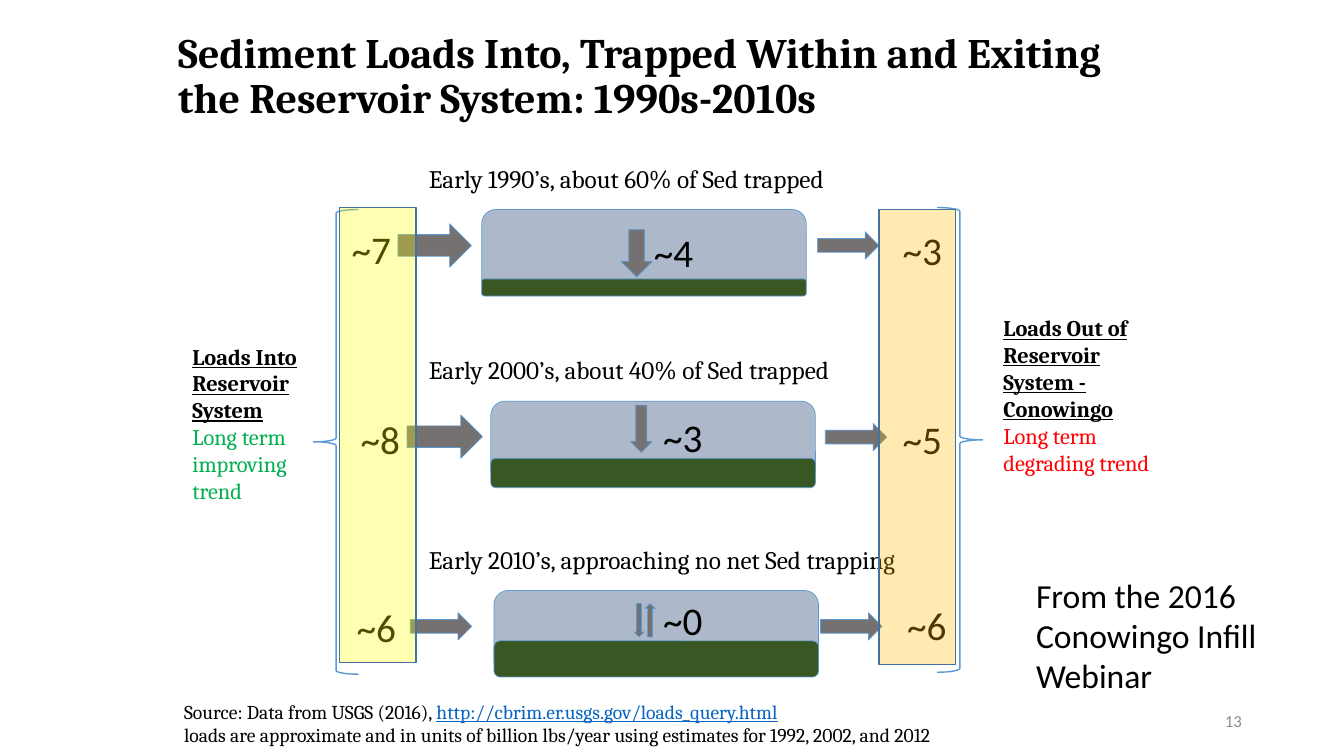
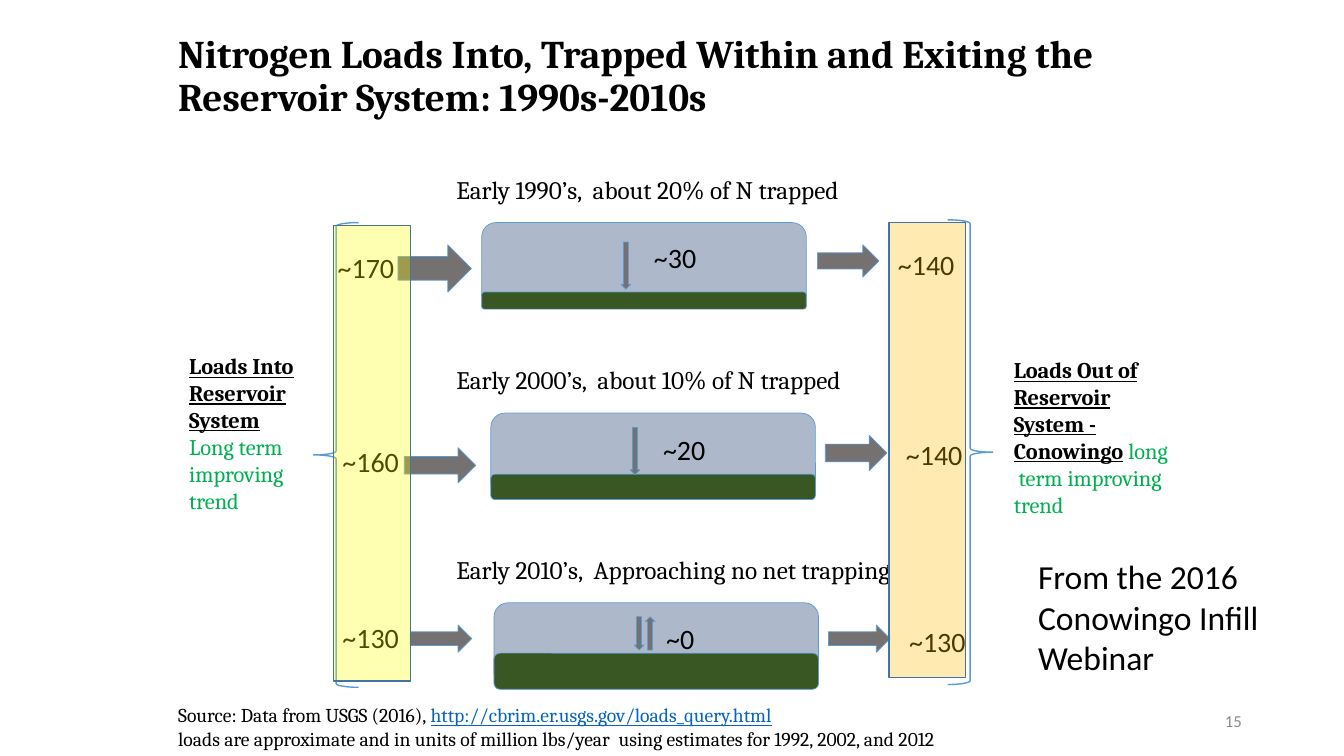
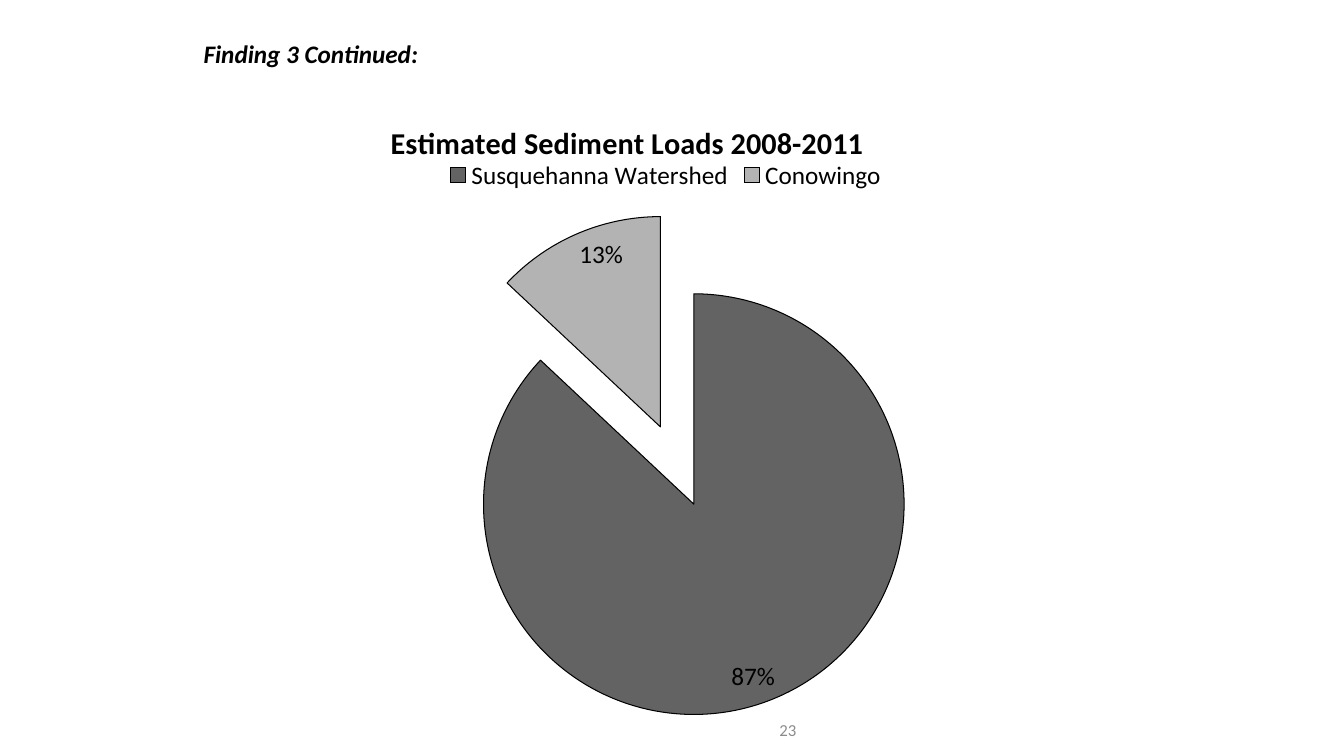
from collections import namedtuple

from lxml import etree
from pptx import Presentation
from pptx.chart.data import CategoryChartData
from pptx.dml.color import RGBColor
from pptx.enum.chart import XL_CHART_TYPE, XL_LABEL_POSITION, XL_LEGEND_POSITION
from pptx.enum.shapes import MSO_SHAPE
from pptx.enum.text import MSO_ANCHOR, PP_ALIGN
from pptx.oxml.ns import qn
from pptx.util import Cm, Pt

ROUNDED = MSO_SHAPE.ROUNDED_RECTANGLE
RECTANGLE = MSO_SHAPE.RECTANGLE
RIGHT_ARROW = MSO_SHAPE.RIGHT_ARROW
DOWN_ARROW = MSO_SHAPE.DOWN_ARROW
UP_ARROW = MSO_SHAPE.UP_ARROW
LEFT_BRACE = MSO_SHAPE.LEFT_BRACE
RIGHT_BRACE = MSO_SHAPE.RIGHT_BRACE
TOP, MIDDLE = MSO_ANCHOR.TOP, MSO_ANCHOR.MIDDLE
LEFT, RIGHT = PP_ALIGN.LEFT, PP_ALIGN.RIGHT
PIE = XL_CHART_TYPE.PIE
INSIDE_END = XL_LABEL_POSITION.INSIDE_END
LEGEND_TOP = XL_LEGEND_POSITION.TOP

SERIF, SANS = "Cambria", "Calibri"
BLACK, GREY, LINK = "000000", "8C8C8C", "0563C1"
GREEN, RED = "00B050", "FF0000"
WATER, BED, ARROW, OUTLINE = "ADB9CA", "385723", "767171", "5B9BD5"
BAND_IN, BAND_OUT, BAND_LINE = "FFFF00", "FFC000", "43739E"

Run = namedtuple("Run", "text color bold italic underline",
                 defaults=(BLACK, False, False, False))
Period = namedtuple("Period", "caption water bed load_in arrow_in down "
                    "trapped arrow_out load_out up", defaults=(None,))
Budget = namedtuple("Budget", "title title_size load_size caption_at periods "
                    "braces bands in_label out_label out_trend source unit "
                    "webinar page")


def rgb(code):
    return RGBColor.from_string(code)


def set_layout(parent, index, **fractions):
    for old in parent.findall(qn("c:layout")):
        parent.remove(old)
    layout = etree.Element(qn("c:layout"))
    manual = etree.SubElement(layout, qn("c:manualLayout"))
    if "w" in fractions:
        etree.SubElement(manual, qn("c:layoutTarget"), val="inner")
    for axis in "xy":
        etree.SubElement(manual, qn(f"c:{axis}Mode"), val="edge")
    for name, value in fractions.items():
        etree.SubElement(manual, qn(f"c:{name}"), val=str(value))
    parent.insert(index, layout)


class Deck:
    def __init__(self):
        self.presentation = Presentation()
        self.presentation.slide_width = Cm(33.87)
        self.presentation.slide_height = Cm(19.05)
        self.slide = None

    def new_slide(self):
        blank = self.presentation.slide_layouts[6]
        self.slide = self.presentation.slides.add_slide(blank)

    def text(self, box, paragraphs, size, font=SERIF, anchor=TOP, align=LEFT,
             spacing=1.0):
        frame = self.slide.shapes.add_textbox(*map(Cm, box)).text_frame
        frame.word_wrap = True
        frame.vertical_anchor = anchor
        for index, runs in enumerate(paragraphs):
            paragraph = frame.add_paragraph() if index else frame.paragraphs[0]
            paragraph.alignment = align
            paragraph.line_spacing = spacing
            for part in runs:
                run = paragraph.add_run()
                run.text = part.text
                run.font.name = font
                run.font.size = Pt(size)
                run.font.color.rgb = rgb(part.color)
                run.font.bold = part.bold
                run.font.italic = part.italic
                run.font.underline = part.underline

    def title(self, words, size):
        self.text((4.24, 0.36, 25.35, 3.18), [[Run(words, bold=True)]], size,
                  anchor=MIDDLE, spacing=0.9)

    def page_number(self, number, box=(23.93, 17.65, 7.62, 1.02)):
        self.text(box, [[Run(number, GREY)]], 12, SANS, MIDDLE, RIGHT)

    def shape(self, kind, box, fill=None, line=OUTLINE, width=0.5, alpha=None):
        shape = self.slide.shapes.add_shape(kind, *map(Cm, box))
        shape.shadow.inherit = False
        shape.line.color.rgb = rgb(line)
        shape.line.width = Pt(width)
        if fill is None:
            shape.fill.background()
            return
        shape.fill.solid()
        shape.fill.fore_color.rgb = rgb(fill)
        if alpha is not None:
            color = shape.element.spPr.find(qn("a:solidFill"))[0]
            etree.SubElement(color, qn("a:alpha"), val=str(alpha * 1000))

    def load(self, words, place, size):
        self.text((*place, 2.5, 1.4), [[Run(words)]], size, SANS)

    def period(self, period, budget):
        left, top = period.water
        caption_left, caption_rise = budget.caption_at
        self.shape(ROUNDED, (left, top, 8.18, 2.13), WATER)
        self.shape(ROUNDED, (left, top + 2.18 - period.bed, 8.18, period.bed), BED)
        self.text((caption_left, top - caption_rise, 13.6, 1.02),
                  [[Run(period.caption)]], 18)
        for kind, box in ((RIGHT_ARROW, period.arrow_in), (DOWN_ARROW, period.down),
                          (UP_ARROW, period.up), (RIGHT_ARROW, period.arrow_out)):
            if box:
                self.shape(kind, box, ARROW)
        for words, *place in (period.load_in, period.trapped, period.load_out):
            self.load(words, place, budget.load_size)

    def budget(self, budget):
        self.new_slide()
        self.title(budget.title, budget.title_size)
        for period in budget.periods:
            self.period(period, budget)
        for kind, place in zip((LEFT_BRACE, RIGHT_BRACE), budget.braces):
            self.shape(kind, (*place, 1.14, 11.71), width=1)
        self.text(budget.in_label,
                  [[Run("Loads Into Reservoir System", bold=True, underline=True)],
                   [Run("Long term improving trend", GREEN)]], 16)
        self.text(budget.out_label,
                  [[Run("Loads Out of Reservoir System - Conowingo", bold=True,
                        underline=True), Run(" "), budget.out_trend]], 16)
        self.text((*budget.source, 21.6, 1.45),
                  [[Run("Source: Data from USGS (2016), "),
                    Run("http://cbrim.er.usgs.gov/loads_query.html", LINK,
                        underline=True)],
                   [Run("loads are approximate and in units of " + budget.unit
                        + " using estimates for 1992, 2002, and 2012")]], 14)
        self.page_number(budget.page)
        self.text((*budget.webinar, 7.47, 3.33),
                  [[Run("From the 2016 Conowingo Infill Webinar")]], 24, SANS)
        for color, place in zip((BAND_IN, BAND_OUT), budget.bands):
            self.shape(RECTANGLE, (*place, 1.93, 11.47), color, BAND_LINE, 1, 30)

    def pie(self, box, title, shares, colors):
        data = CategoryChartData()
        data.categories = list(shares)
        data.add_series("Series 1", list(shares.values()))
        chart = self.slide.shapes.add_chart(PIE, *map(Cm, box), data).chart
        chart.font.name = SANS
        chart.font.size = Pt(18)
        chart.font.color.rgb = rgb(BLACK)

        chart.has_title = True
        heading = chart.chart_title.text_frame.paragraphs[0].add_run()
        heading.text = title
        heading.font.name = SANS
        heading.font.size = Pt(21.6)
        heading.font.bold = True
        heading.font.color.rgb = rgb(BLACK)
        chart.has_legend = True
        chart.legend.position = LEGEND_TOP
        chart.legend.include_in_layout = False

        plot = chart.plots[0]
        plot.vary_by_categories = True
        series = plot.series[0]
        explosion = etree.Element(qn("c:explosion"), val="20")
        series._element.find(qn("c:tx")).addnext(explosion)
        for index, color in enumerate(colors):
            slice_format = series.points[index].format
            slice_format.fill.solid()
            slice_format.fill.fore_color.rgb = rgb(color)
            slice_format.line.color.rgb = rgb(BLACK)
            slice_format.line.width = Pt(0.75)
        plot.has_data_labels = True
        labels = plot.data_labels
        labels.show_percentage = True
        labels.show_value = False
        labels.number_format = "0%"
        labels.number_format_is_linked = False
        labels.position = INSIDE_END

        set_layout(chart.chart_title._element, 1, x=0.2, y=0.05)
        set_layout(chart.legend._element, 1, x=0.26, y=0.11)
        plot_area = plot._element.getparent()
        set_layout(plot_area, 0, x=0.24, y=0.2, w=0.53, h=0.78)


SEDIMENT = Budget(
    title="Sediment Loads Into, Trapped Within and Exiting the Reservoir System: 1990s-2010s",
    title_size=30, load_size=28, caption_at=(10.56, 1.3),
    periods=(
        Period("Early 1990’s, about 60% of Sed trapped", (12.14, 5.28), 0.43,
               ("~7", 8.61, 5.56), (10.03, 5.64, 1.85, 1.09),
               (15.65, 5.79, 0.79, 1.19), ("~4", 16.23, 5.64),
               (20.6, 5.84, 1.55, 0.69), ("~3", 22.5, 5.59)),
        Period("Early 2000’s, about 40% of Sed trapped", (12.37, 10.11), 0.74,
               ("~8", 8.84, 10.34), (10.26, 10.46, 1.9, 1.09),
               (15.88, 10.21, 0.56, 1.19), ("~3", 16.46, 10.29),
               (20.8, 10.67, 1.55, 0.69), ("~5", 22.5, 10.34)),
        Period("Early 2010’s, approaching no net Sed trapping", (12.45, 14.88), 0.91,
               ("~6", 8.74, 15.09), (10.34, 15.44, 1.55, 0.69),
               (15.98, 15.21, 0.25, 0.84), ("~0", 16.46, 14.91),
               (20.68, 15.44, 1.55, 0.69), ("~6", 22.61, 15.04),
               (16.26, 15.21, 0.25, 0.84))),
    braces=((7.9, 5.28), (23.62, 5.23)), bands=((8.56, 5.23), (22.15, 5.28)),
    in_label=(4.6, 8.51, 3.4, 5.05), out_label=(25.04, 7.8, 4.24, 5.74),
    out_trend=Run("Long term degrading trend", RED),
    source=(4.39, 17.5), unit="billion lbs/year", webinar=(25.86, 14.35), page="13")

NITROGEN = Budget(
    title="Nitrogen Loads Into, Trapped Within and Exiting the Reservoir System: 1990s-2010s",
    title_size=28, load_size=20, caption_at=(11.25, 1.35),
    periods=(
        Period("Early 1990’s,  about 20% of N trapped", (12.14, 5.61), 0.43,
               ("~170", 8.26, 6.2), (10.03, 6.17, 1.85, 1.19),
               (15.65, 6.1, 0.25, 1.19), ("~30", 16.23, 5.94),
               (20.6, 6.17, 1.55, 0.81), ("~140", 22.38, 6.1)),
        Period("Early 2000’s,  about 10% of N trapped", (12.37, 10.41), 0.64,
               ("~160", 8.38, 11.07), (10.19, 11.28, 1.8, 0.89),
               (15.88, 10.77, 0.25, 1.19), ("~20", 16.46, 10.77),
               (20.8, 10.97, 1.55, 0.89), ("~140", 22.58, 10.9)),
        Period("Early 2010’s,  Approaching no net trapping", (12.45, 15.19), 0.91,
               ("~130", 8.38, 15.52), (10.34, 15.75, 1.55, 0.69),
               (15.98, 15.54, 0.25, 0.84), ("~0", 16.54, 15.54),
               (20.88, 15.75, 1.55, 0.69), ("~130", 22.66, 15.6),
               (16.26, 15.54, 0.25, 0.84))),
    braces=((7.9, 5.61), (23.88, 5.54)), bands=((8.41, 5.69), (22.4, 5.61)),
    in_label=(4.52, 8.76, 3.58, 5.05), out_label=(25.3, 8.86, 4.42, 5.05),
    out_trend=Run("long  term improving trend", GREEN),
    source=(4.24, 17.6), unit="million lbs/year ", webinar=(25.91, 13.89), page="15")


def main():
    deck = Deck()
    deck.budget(SEDIMENT)
    deck.budget(NITROGEN)
    deck.new_slide()
    deck.page_number("23", (14.4, 17.73, 5.92, 1.32))
    deck.pie((4.88, 2.11, 24.13, 16.31), "Estimated Sediment Loads 2008-2011",
             {"Susquehanna Watershed": 87, "Conowingo": 13}, ("636363", "B3B3B3"))
    deck.text((4.88, 0.84, 7.21, 1.02),
              [[Run("Finding 3 Continued:", bold=True, italic=True)]], 18, SANS)
    deck.presentation.save("out.pptx")


if __name__ == "__main__":
    main()
